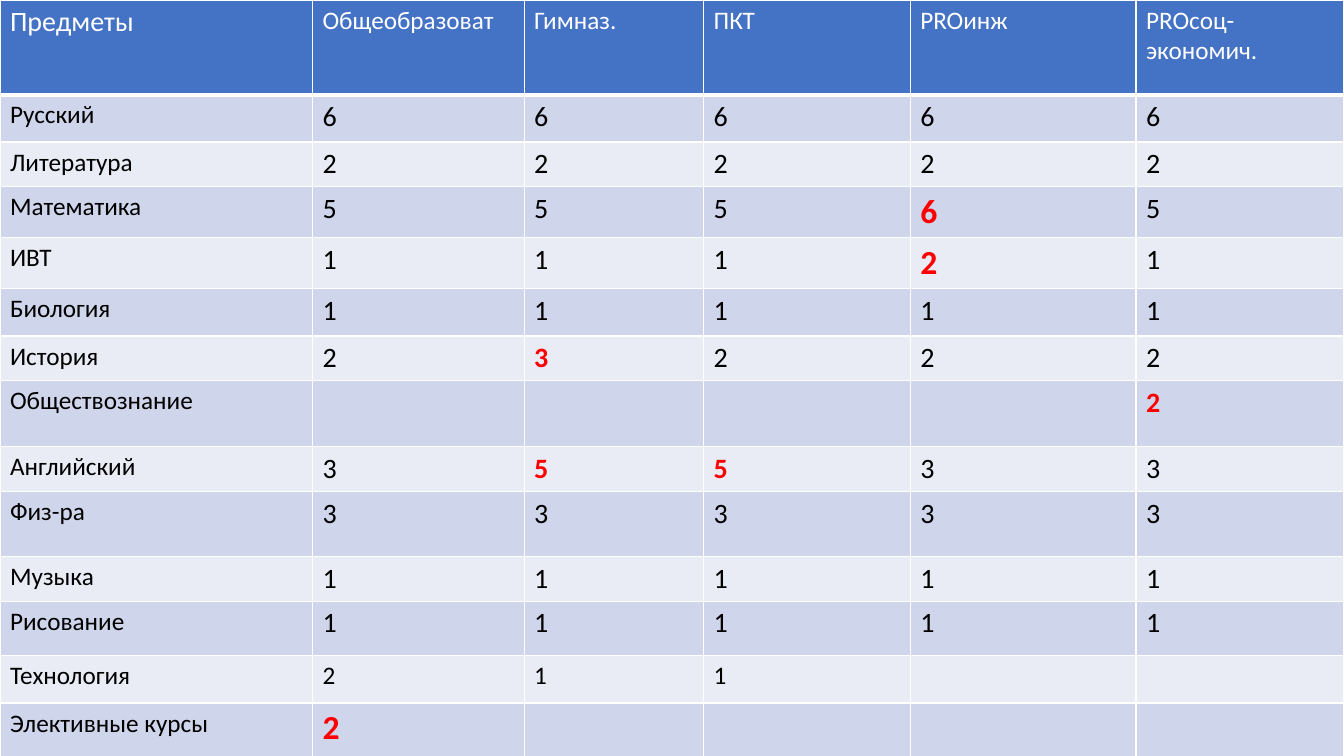
from lxml import etree
from pptx import Presentation
from pptx.dml.color import RGBColor
from pptx.oxml import ns
from pptx.util import Pt

WHITE = RGBColor(0xFF, 0xFF, 0xFF)
BLACK = RGBColor(0x00, 0x00, 0x00)
RED = RGBColor(0xFF, 0x00, 0x00)
HEADER_BLUE = RGBColor(0x44, 0x72, 0xC4)
BANDS = [RGBColor(0xE9, 0xEB, 0xF5), RGBColor(0xCF, 0xD5, 0xEA)]

# Row height, subject, hours in each class profile
COLUMN_WIDTHS = [223.2, 151.2, 128.2, 147.6, 161.3, 148.5]
ROWS = [
    (67.7, "Предметы", ["Общеобразоват", "Гимназ.", "ПКТ", "PROинж", "PROсоц-экономич."]),
    (33.8, "Русский", [6, 6, 6, 6, 6]),
    (28.1, "Литература", [2, 2, 2, 2, 2]),
    (35.3, "Математика", [5, 5, 5, 6, 5]),
    (33.8, "ИВТ", [1, 1, 1, 2, 1]),
    (33.8, "Биология", [1, 1, 1, 1, 1]),
    (28.8, "История", [2, 3, 2, 2, 2]),
    (47.5, "Обществознание", ["", "", "", "", 2]),
    (31, "Английский", [3, 5, 5, 3, 3]),
    (46.8, "Физ-ра", [3, 3, 3, 3, 3]),
    (28.8, "Музыка", [1, 1, 1, 1, 1]),
    (38.9, "Рисование", [1, 1, 1, 1, 1]),
    (33.8, "Технология", [2, 1, 1, "", ""]),
    (51.8, "Элективные курсы", [2, "", "", "", ""]),
]
# Red bold hours: (subject, column) and text size
HIGHLIGHTS = {
    ("Математика", 4): 24,
    ("ИВТ", 4): 24,
    ("История", 2): 20,
    ("Обществознание", 5): 20,
    ("Английский", 2): 20,
    ("Английский", 3): 20,
    ("Элективные курсы", 1): 24,
}


def add_borders(cell, bottom_width):
    properties = cell._tc.get_or_add_tcPr()
    for side, width in {"lnL": 1, "lnR": 1, "lnT": 1, "lnB": bottom_width}.items():
        line = etree.SubElement(properties, ns.qn(f"a:{side}"), w=str(Pt(width)))
        fill = etree.SubElement(line, ns.qn("a:solidFill"))
        etree.SubElement(fill, ns.qn("a:srgbClr"), val=str(WHITE))


presentation = Presentation()
presentation.slide_width = Pt(960)
presentation.slide_height = Pt(540)
slide = presentation.slides.add_slide(presentation.slide_layouts[6])

# Table grid
table = slide.shapes.add_table(
    len(ROWS), len(COLUMN_WIDTHS), 0, 0, Pt(960), Pt(540)
).table
for column, width in zip(table.columns, COLUMN_WIDTHS):
    column.width = Pt(width)

# Cells
for row_index, (height, subject, hours) in enumerate(ROWS):
    table.rows[row_index].height = Pt(height)
    is_header = row_index == 0
    for column_index, value in enumerate([subject, *hours]):
        cell = table.cell(row_index, column_index)
        add_borders(cell, 3 if is_header else 1)
        cell.fill.solid()
        cell.fill.fore_color.rgb = HEADER_BLUE if is_header else BANDS[row_index % 2]
        if value == "":
            continue

        highlight = HIGHLIGHTS.get((subject, column_index))
        if is_header:
            size = 20 if column_index == 0 else 18
        else:
            size = 18 if column_index == 0 or subject == "Технология" else 20
        text_format = {
            "name": "Calibri",
            "size": Pt(highlight or size),
            "bold": highlight is not None,
        }
        run = cell.text_frame.paragraphs[0].add_run()
        run.text = str(value)
        for attribute, setting in text_format.items():
            setattr(run.font, attribute, setting)
        run.font.color.rgb = WHITE if is_header else RED if highlight else BLACK

presentation.save("out.pptx")
